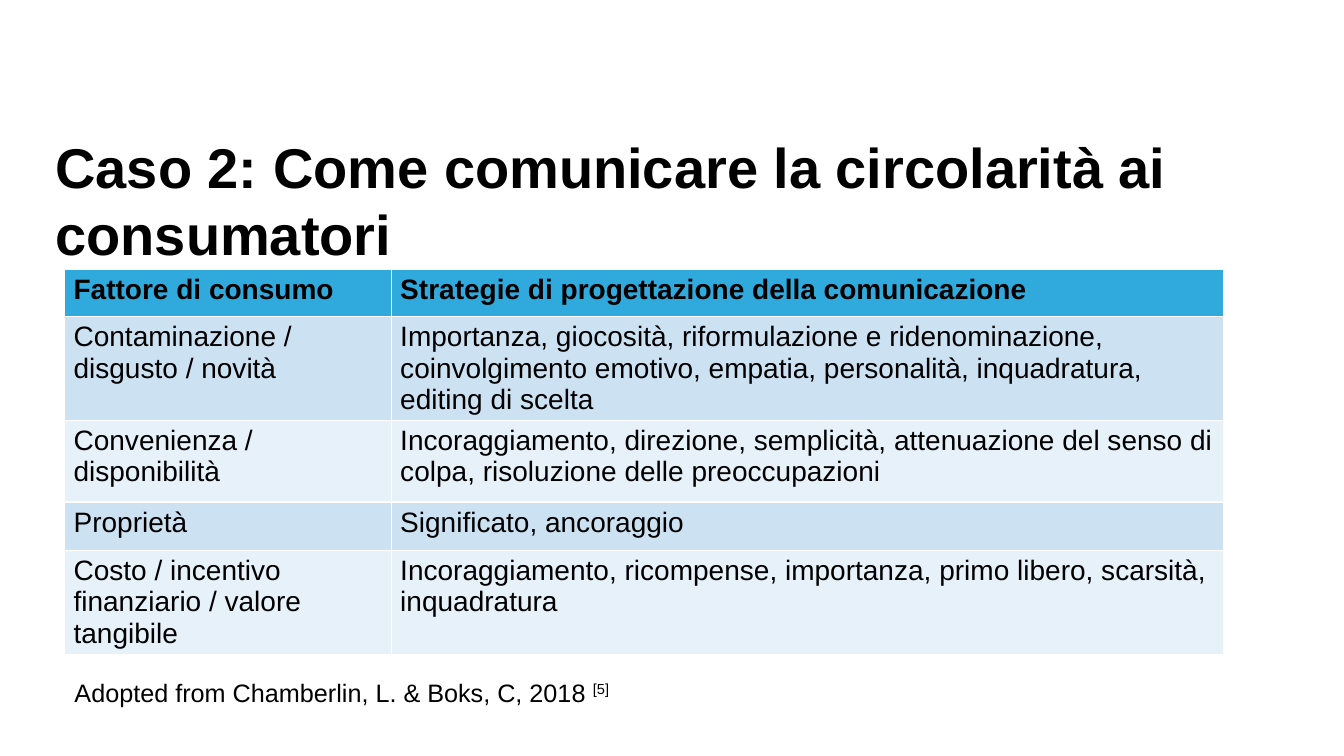
"""Build the slide on communicating circularity to consumers."""
from pptx import Presentation
from pptx.dml.color import RGBColor
from pptx.enum.text import MSO_ANCHOR as Anchor, MSO_AUTO_SIZE as AutoSize, PP_ALIGN as Align
from pptx.util import Inches, Pt

COLORS = {"text": "000000", "header": "30A9DD", "odd": "CCE1F2", "even": "E7F1F9"}
TITLE = "Caso 2: Come comunicare la circolarità ai consumatori"
ROWS = [
    ("Fattore di consumo", "Strategie di progettazione della comunicazione"),
    ("Contaminazione / disgusto / novità",
     "Importanza, giocosità, riformulazione e ridenominazione, coinvolgimento emotivo, "
     "empatia, personalità, inquadratura, editing di scelta"),
    ("Convenienza / disponibilità",
     "Incoraggiamento, direzione, semplicità, attenuazione del senso di colpa, "
     "risoluzione delle preoccupazioni"),
    ("Proprietà", "Significato, ancoraggio"),
    ("Costo / incentivo finanziario / valore tangibile",
     "Incoraggiamento, ricompense, importanza, primo libero, scarsità, inquadratura"),
]
COLUMN_WIDTHS = (3.24, 8.26)
ROW_HEIGHTS = (0.47, 0.47, 0.81, 0.48, 0.81)
SOURCE = "Adopted from Chamberlin, L. & Boks, C, 2018 "
REFERENCE = "[5]"


def add_text(paragraph, text, size=20, bold=False, superscript=False):
    """Append a formatted run to a paragraph."""
    run = paragraph.add_run()
    run.text = text
    run.font.name = "Arial"
    run.font.size = Pt(size)
    run.font.bold = bold
    run.font.color.rgb = RGBColor.from_string(COLORS["text"])
    if superscript:
        run._r.get_or_add_rPr().set("baseline", "30000")


def add_title(slide):
    """Place and fill the title placeholder."""
    title = slide.shapes.title
    title.left, title.top = Inches(0.45), Inches(1.26)
    title.width, title.height = Inches(12.66), Inches(0.71)
    frame = title.text_frame
    frame.auto_size = AutoSize.NONE
    frame.word_wrap = True
    frame.vertical_anchor = Anchor.TOP
    paragraph = frame.paragraphs[0]
    paragraph.alignment = Align.LEFT
    paragraph.line_spacing = Pt(48)
    add_text(paragraph, TITLE, size=40, bold=True)


def add_strategy_table(slide):
    """Add the table of consumption factors and strategies."""
    table = slide.shapes.add_table(
        len(ROWS), len(COLUMN_WIDTHS), Inches(0.64), Inches(2.67),
        Inches(sum(COLUMN_WIDTHS)), Inches(sum(ROW_HEIGHTS))).table
    for column, width in zip(table.columns, COLUMN_WIDTHS):
        column.width = Inches(width)
    for index, (row, height, texts) in enumerate(zip(table.rows, ROW_HEIGHTS, ROWS)):
        row.height = Inches(height)
        band = "header" if index == 0 else "odd" if index % 2 else "even"
        for cell, text in zip(row.cells, texts):
            cell.margin_left = cell.margin_right = Inches(0.09)
            cell.fill.solid()
            cell.fill.fore_color.rgb = RGBColor.from_string(COLORS[band])
            add_text(cell.text_frame.paragraphs[0], text, bold=index == 0)


def add_source(slide):
    """Add the source line below the table."""
    box = slide.shapes.add_textbox(Inches(0.64), Inches(6.67), Inches(5.72), Inches(0.4))
    box.text_frame.word_wrap = True
    box.text_frame.auto_size = AutoSize.SHAPE_TO_FIT_TEXT
    paragraph = box.text_frame.paragraphs[0]
    add_text(paragraph, SOURCE, size=18)
    add_text(paragraph, REFERENCE, size=18, superscript=True)


def main():
    """Build and save the presentation."""
    presentation = Presentation()
    presentation.slide_width, presentation.slide_height = Inches(13.33), Inches(7.5)
    slide = presentation.slides.add_slide(presentation.slide_layouts[5])
    add_title(slide)
    add_strategy_table(slide)
    add_source(slide)
    presentation.save("out.pptx")


if __name__ == "__main__":
    main()
